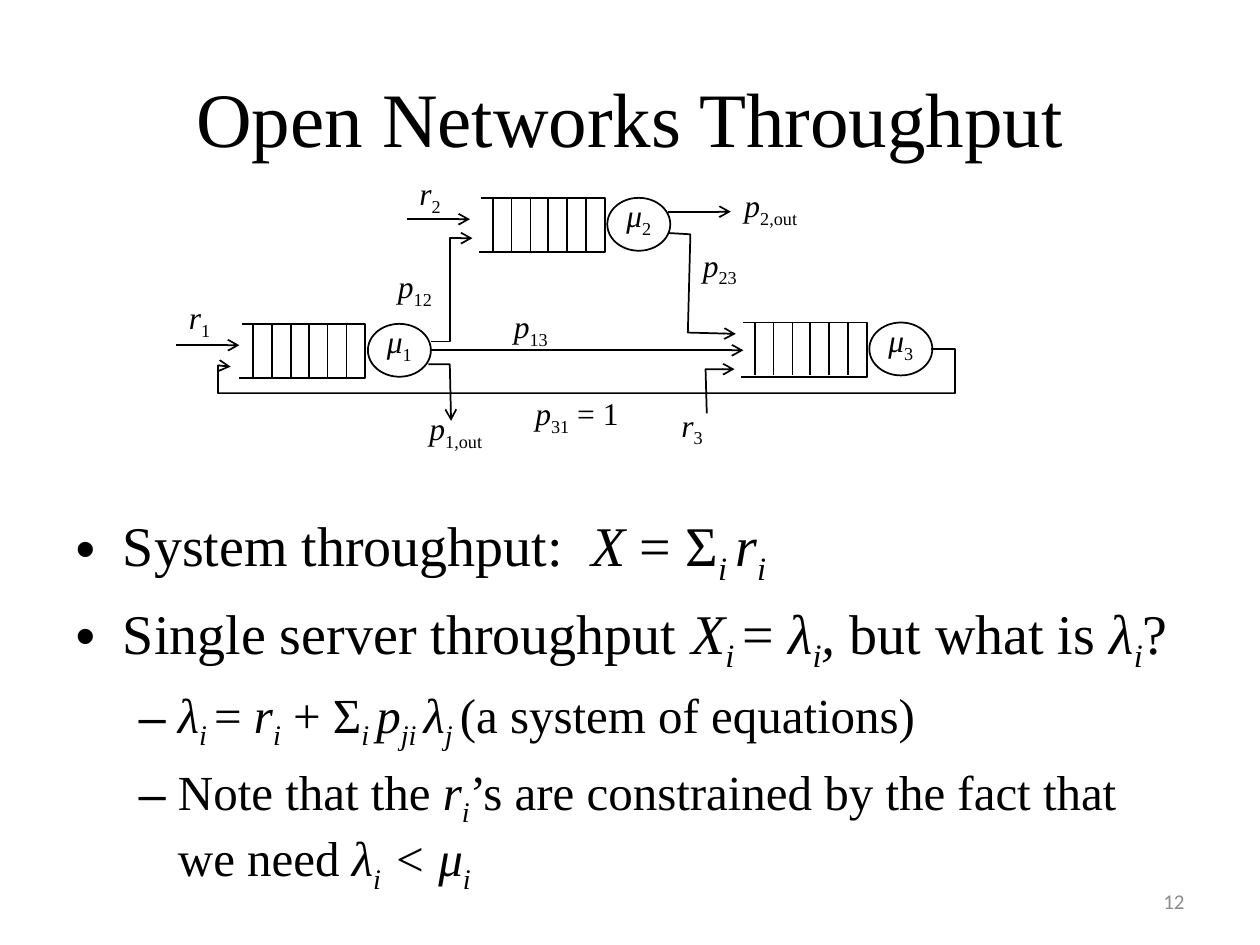
from pptx import Presentation
from pptx.dml.color import RGBColor
from pptx.enum.shapes import MSO_CONNECTOR as Connector, MSO_SHAPE as Shape
from pptx.enum.text import MSO_ANCHOR as Anchor, MSO_AUTO_SIZE as AutoSize, PP_ALIGN as Align
from pptx.oxml.ns import qn
from pptx.util import Pt
from lxml.etree import SubElement

SCALE = 9144
BLACK = RGBColor(0x00, 0x00, 0x00)
GRAY = RGBColor(0x8C, 0x8C, 0x8C)
SERIF = "Times New Roman"
LABEL_SIZE = 18

PLAIN, ITALIC, SUB, ITALIC_SUB = "", "i", "s", "is"

BULLETS = [
    (0, 32, [("System throughput:  ", PLAIN), ("X ", ITALIC), ("= Σ", PLAIN),
             ("i ", ITALIC_SUB), ("r", ITALIC), ("i", ITALIC_SUB)]),
    (0, 32, [("Single server throughput ", PLAIN), ("X", ITALIC), ("i ", ITALIC_SUB),
             ("= ", PLAIN), ("λ", ITALIC), ("i", ITALIC_SUB), (", ", ITALIC),
             ("but what is", PLAIN), (" λ", ITALIC), ("i", ITALIC_SUB), ("?", PLAIN)]),
    (1, 28, [("λ", ITALIC), ("i ", ITALIC_SUB), ("= ", PLAIN), ("r", ITALIC),
             ("i", ITALIC_SUB), (" + Σ", PLAIN), ("i ", ITALIC_SUB), ("p", ITALIC),
             ("ji ", ITALIC_SUB), ("λ", ITALIC), ("j ", ITALIC_SUB),
             ("(a system of equations)", PLAIN)]),
    (1, 28, [("Note that the ", PLAIN), ("r", ITALIC), ("i", ITALIC_SUB),
             ("’s are constrained by the fact that we need ", PLAIN), ("λ", ITALIC),
             ("i", ITALIC_SUB), (" < μ", ITALIC), ("i", ITALIC_SUB)]),
]

QUEUES = [("1", 50, 124), ("2", 240, 24), ("3", 448, 123)]

STRAIGHT_ARROWS = [
    (0, 141, 50, 141),
    (183, 41, 233, 41),
    (202, 145, 450, 145),
    (390, 35, 440, 35),
]

BENT_ARROWS = [
    [(202, 138), (217, 138), (217, 56), (235, 56)],
    [(200, 156), (217, 156), (218, 201)],
    [(599, 144), (618, 144), (618, 179), (33, 179), (33, 157), (43, 158)],
    [(391, 52), (408, 53), (406, 131), (444, 132)],
    [(421, 195), (420, 160), (443, 160)],
]

LABELS = [
    ("r", "1", "", 0, 99, 50),
    ("r", "2", "", 183, 0, 50),
    ("r", "3", "", 391, 184, 50),
    ("p", "12", "", 166, 74, 50),
    ("p", "1,out", "", 191, 187, 67),
    ("p", "2,out", "", 441, 10, 67),
    ("p", "13", "", 258, 106, 50),
    ("p", "23", "", 408, 57, 50),
    ("p", "31", " = 1", 275, 175, 92),
]


def px(*lengths):
    return [length * SCALE for length in lengths]


def move(shape, left, top, width, height):
    shape.left, shape.top, shape.width, shape.height = px(left, top, width, height)


def write(paragraph, text, size=LABEL_SIZE, font=SERIF, color=BLACK, style=PLAIN):
    run = paragraph.add_run()
    run.text = text
    run.font.size = Pt(size)
    run.font.name = font
    run.font.color.rgb = color
    run.font.italic = "i" in style
    if "s" in style:
        run._r.get_or_add_rPr().set("baseline", "-25000")


def write_symbol(paragraph, symbol, index, rest=""):
    write(paragraph, symbol, style=ITALIC)
    write(paragraph, index, style=SUB)
    if rest:
        write(paragraph, rest)


def style_line(shape, arrow=False):
    shape.line.color.rgb = BLACK
    shape.line.width = Pt(1)
    if arrow:
        SubElement(shape.line._get_or_add_ln(), qn("a:tailEnd"), type="arrow")


def add_line(slide, left, top, right, bottom, arrow=False):
    line = slide.shapes.add_connector(Connector.STRAIGHT, *px(left, top, right, bottom))
    style_line(line, arrow)
    SubElement(line._element.spPr, qn("a:effectLst"))


def add_polyline(slide, left, top, points, arrow=False):
    corners = [(left + x, top + y) for x, y in points]
    builder = slide.shapes.build_freeform(*corners[0], scale=SCALE)
    builder.add_line_segments(corners[1:], close=False)
    outline = builder.convert_to_shape()
    outline.shadow.inherit = False
    outline.fill.background()
    style_line(outline, arrow)


def add_text_box(slide, left, top, width, height):
    box = slide.shapes.add_textbox(*px(left, top, width, height))
    box.text_frame.word_wrap = True
    return box.text_frame


def draw_queue(slide, index, left, top):
    add_polyline(slide, left, top, [(2, 0), (100, 0), (100, 43), (0, 43)])
    for slot in range(6):
        x = left + 11 + round(slot * 14.8)
        add_line(slide, x, top, x, top + 42)
    server = slide.shapes.add_shape(Shape.OVAL, *px(left + 102, top, 50, 42))
    server.shadow.inherit = False
    server.fill.background()
    style_line(server)
    frame = server.text_frame
    frame.margin_left, frame.margin_top, frame.margin_right, frame.margin_bottom = px(0, 0, 0, 10)
    frame.vertical_anchor = Anchor.MIDDLE
    paragraph = frame.paragraphs[0]
    paragraph.alignment = Align.CENTER
    write_symbol(paragraph, "μ", index)


def draw_network(slide, left, top):
    for index, x, y in QUEUES:
        draw_queue(slide, index, left + x, top + y)
    for x1, y1, x2, y2 in STRAIGHT_ARROWS:
        add_line(slide, left + x1, top + y1, left + x2, top + y2, arrow=True)
    for points in BENT_ARROWS:
        add_polyline(slide, left, top, points, arrow=True)
    for symbol, index, rest, x, y, width in LABELS:
        frame = add_text_box(slide, left + x, top + y, width, 40)
        write_symbol(frame.paragraphs[0], symbol, index, rest)


def fill_title(title, left, top, width, height):
    move(title, left, top, width, height)
    title.text_frame.vertical_anchor = Anchor.MIDDLE
    paragraph = title.text_frame.paragraphs[0]
    paragraph.alignment = Align.CENTER
    write(paragraph, "Open Networks Throughput", size=44)


def fill_body(body, left, top, width, height):
    move(body, left, top, width, height)
    frame = body.text_frame
    frame.auto_size = AutoSize.NONE
    for number, (level, size, runs) in enumerate(BULLETS):
        paragraph = frame.add_paragraph() if number else frame.paragraphs[0]
        paragraph.level = level
        for text, style in runs:
            write(paragraph, text, size=size, style=style)


def add_page_number(slide, left, top, width, height):
    frame = add_text_box(slide, left, top, width, height)
    frame.vertical_anchor = Anchor.MIDDLE
    paragraph = frame.paragraphs[0]
    paragraph.alignment = Align.RIGHT
    write(paragraph, "12", size=12, font="Calibri", color=GRAY)


def main():
    presentation = Presentation()
    presentation.slide_width, presentation.slide_height = px(1000, 750)
    slide = presentation.slides.add_slide(presentation.slide_layouts[1])
    fill_title(slide.shapes.title, 50, 30, 900, 125)
    fill_body(slide.placeholders[1], 50, 400, 900, 270)
    add_page_number(slide, 717, 695, 233, 40)
    draw_network(slide, 140, 133)
    presentation.save("out.pptx")


if __name__ == "__main__":
    main()
